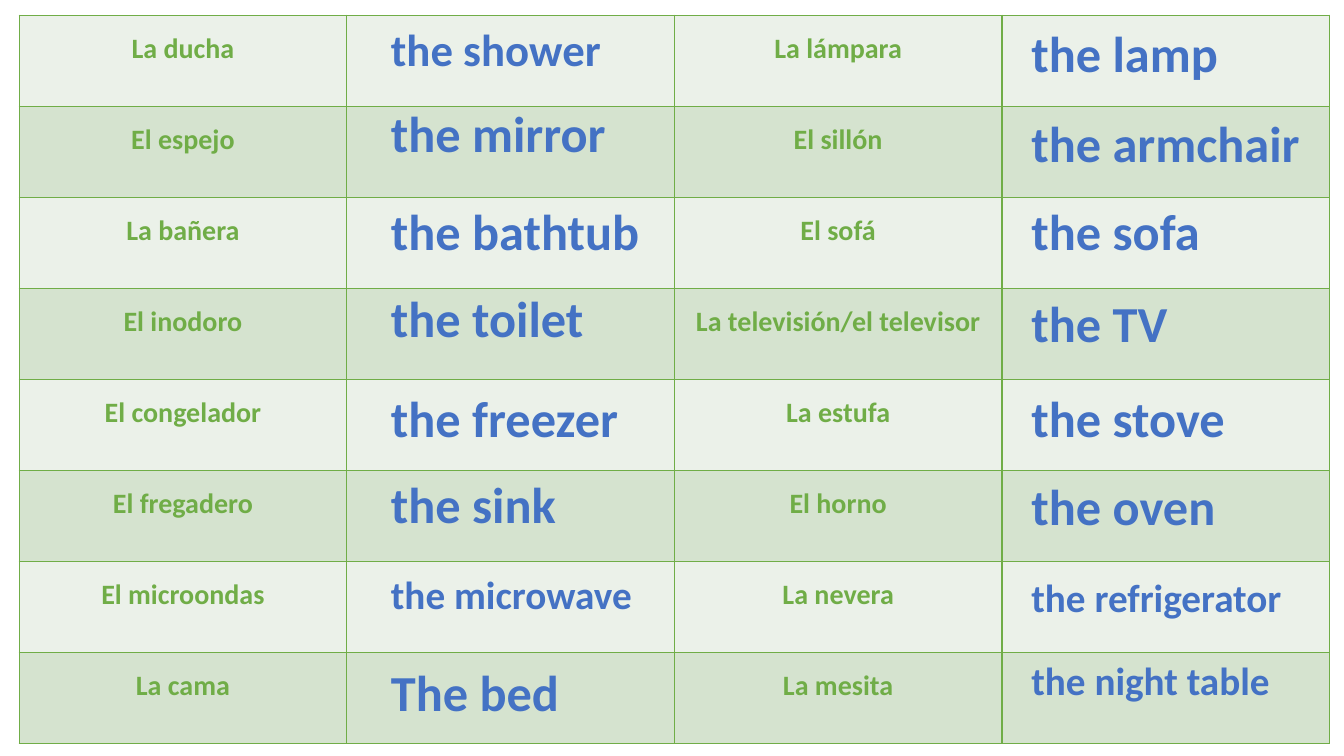
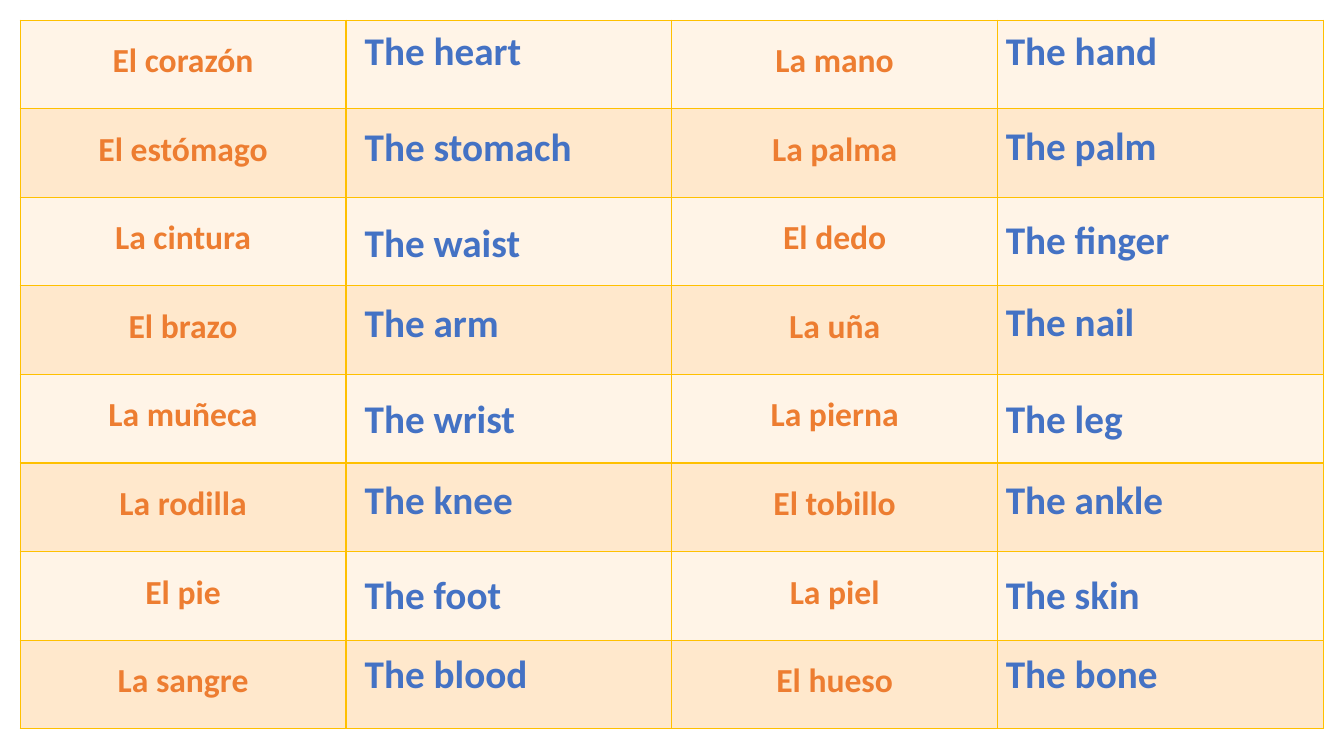
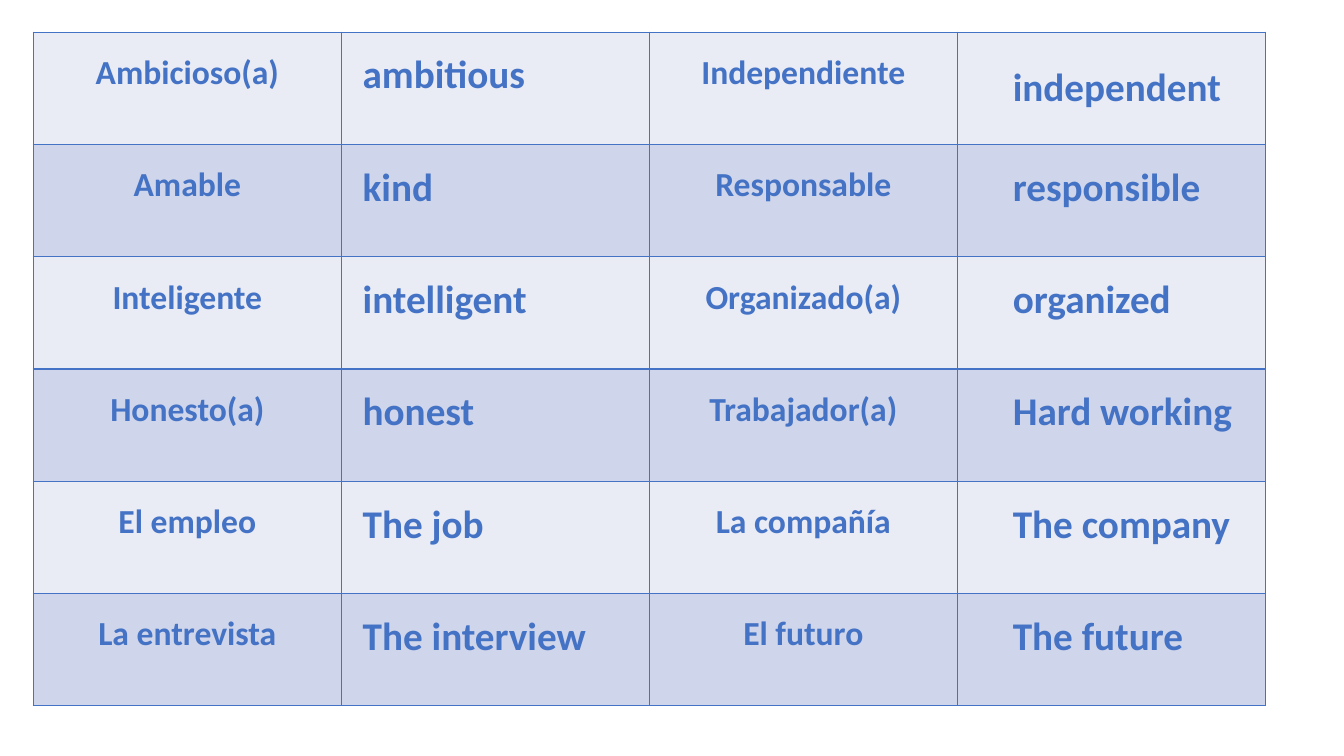
from dataclasses import dataclass

from lxml import etree
from pptx import Presentation
from pptx.dml.color import RGBColor
from pptx.enum.text import MSO_AUTO_SIZE, PP_ALIGN
from pptx.oxml.ns import qn
from pptx.util import Pt

CENTER = PP_ALIGN.CENTER
GROW = MSO_AUTO_SIZE.SHAPE_TO_FIT_TEXT
FONT = "Calibri"
BLANK_LAYOUT = 6
COLUMNS = 4
COLORS = {
    "answer": "4472C4",
    "home_term": "70AD47", "home_line": "70AD47",
    "home_light": "EBF1E9", "home_dark": "D5E3CF",
    "body_term": "ED7D31", "body_line": "FFC000",
    "body_light": "FFF4E7", "body_dark": "FFE8CC",
    "work_term": "4472C4", "work_line": "4472C4",
    "work_light": "E9EBF5", "work_dark": "CFD5EA",
}


@dataclass
class Vocabulary:
    """One slide; each entry is term, answer, drop from its row top, answer size."""
    theme: str
    box: tuple
    term_size: int
    answer_insets: tuple
    answer_width: int
    left_entries: list
    right_entries: list


VOCABULARIES = [
    Vocabulary("home", (13.7, 10.8, 936, 520), 20, (24.5, 14), 216, [
        ("La ducha", "the shower", 1.4, 32),
        ("El espejo", "the mirror", -6.7, 36),
        ("La bañera", "the bathtub", -1.1, 36),
        ("El inodoro", "the toilet", -4.2, 36),
        ("El congelador", "the freezer", 2.1, 36),
        ("El fregadero", "the sink", -1.7, 36),
        ("El microondas", "the microwave", 2.8, 28),
        ("La cama", "The bed", 2.9, 36),
    ], [
        ("La lámpara", "the lamp", 1.4, 36),
        ("El sillón", "the armchair", 0.5, 36),
        ("El sofá", "the sofa", -1.1, 36),
        ("La televisión/el televisor", "the TV", -0.6, 36),
        ("La estufa", "the stove", 2.1, 36),
        ("El horno", "the oven", -0.3, 36),
        ("La nevera", "the refrigerator", 5, 28),
        ("La mesita", "the night table", -0.7, 28),
    ]),
    Vocabulary("body", (14.4, 14.4, 931, 506.2), 24, (6.3, -1.3), 233, [
        ("El corazón", "The heart", 0.6, 28),
        ("El estómago", "The stomach", 5.8, 28),
        ("La cintura", "The waist", 11.1, 28),
        ("El brazo", "The arm", 5.2, 28),
        ("La muñeca", "The wrist", 10.5, 28),
        ("La rodilla", "The knee", 5.2, 28),
        ("El pie", "The foot", 9.9, 28),
        ("La sangre", "The blood", 2.6, 28),
    ], [
        ("La mano", "The hand", 0.6, 28),
        ("La palma", "The palm", 5.1, 28),
        ("El dedo", "The finger", 9.5, 28),
        ("La uña", "The nail", 4.6, 28),
        ("La pierna", "The leg", 10.5, 28),
        ("El tobillo", "The ankle", 5.2, 28),
        ("La piel", "The skin", 9.9, 28),
        ("El hueso", "The bone", 2.6, 28),
    ]),
    Vocabulary("work", (23.8, 23, 880, 481.2), 24, (8.2, 32.6), 233, [
        ("Ambicioso(a)", "ambitious", 9, 28),
        ("Amable", "kind", 9, 28),
        ("Inteligente", "intelligent", 9, 28),
        ("Honesto(a)", "honest", 9, 28),
        ("El empleo", "The job", 9, 28),
        ("La entrevista", "The interview", 9, 28),
    ], [
        ("Independiente", "independent", 18, 28),
        ("Responsable", "responsible", 9, 28),
        ("Organizado(a)", "organized", 9, 28),
        ("Trabajador(a)", "Hard working", 9, 28),
        ("La compañía", "The company", 9, 28),
        ("El futuro", "The future", 9, 28),
    ]),
]


def color(name):
    """Return a palette colour."""
    return RGBColor.from_string(COLORS[name])


def write(paragraph, text, size, color_name):
    """Put bold text into a paragraph."""
    paragraph.text = text
    font = paragraph.font
    font.name, font.size, font.bold = FONT, Pt(size), True
    font.color.rgb = color(color_name)


def format_cell(cell, fill_name, line_name):
    """Give a cell its borders, fill and margins."""
    properties = cell._tc.get_or_add_tcPr()
    for side in ("a:lnL", "a:lnR", "a:lnT", "a:lnB"):
        line = etree.SubElement(properties, qn(side), w=str(Pt(1)))
        fill = etree.SubElement(line, qn("a:solidFill"))
        etree.SubElement(fill, qn("a:srgbClr"), val=COLORS[line_name])
    cell.fill.solid()
    cell.fill.fore_color.rgb = color(fill_name)
    cell.margin_left = cell.margin_right = Pt(5)
    cell.margin_top = cell.margin_bottom = 0


def add_term_table(slide, vocabulary):
    """Add the banded table with the terms in its first and third columns."""
    rows = list(zip(vocabulary.left_entries, vocabulary.right_entries))
    left, top, width, height = map(Pt, vocabulary.box)
    table = slide.shapes.add_table(len(rows), COLUMNS, left, top, width, height).table
    table.first_row = table.horz_banding = False
    theme = vocabulary.theme
    for row, entries in enumerate(rows):
        shade = "dark" if row % 2 else "light"
        for column in range(COLUMNS):
            format_cell(table.cell(row, column), f"{theme}_{shade}", f"{theme}_line")
        for side, entry in enumerate(entries):
            paragraph = table.cell(row, 2 * side).text_frame.paragraphs[0]
            write(paragraph, entry[0], vocabulary.term_size, f"{theme}_term")
            paragraph.alignment = CENTER
            paragraph.line_spacing = 1.5


def add_answers(slide, vocabulary):
    """Lay the answers over the second and fourth columns of the table."""
    left, top, width, height = vocabulary.box
    for side, entries in enumerate((vocabulary.left_entries, vocabulary.right_entries)):
        answer_left = left + width * (2 * side + 1) / COLUMNS + vocabulary.answer_insets[side]
        for row, (_, answer, drop, size) in enumerate(entries):
            answer_top = top + height * row / len(entries) + drop
            shape = slide.shapes.add_textbox(
                Pt(answer_left), Pt(answer_top),
                Pt(vocabulary.answer_width), Pt(1.22 * size + 7.2))
            frame = shape.text_frame
            frame.word_wrap = True
            frame.auto_size = GROW
            write(frame.paragraphs[0], answer, size, "answer")


def main():
    """Build and save the presentation."""
    presentation = Presentation()
    presentation.slide_width, presentation.slide_height = Pt(960), Pt(540)
    for vocabulary in VOCABULARIES:
        slide = presentation.slides.add_slide(presentation.slide_layouts[BLANK_LAYOUT])
        add_term_table(slide, vocabulary)
        add_answers(slide, vocabulary)
    presentation.save("out.pptx")


if __name__ == "__main__":
    main()
